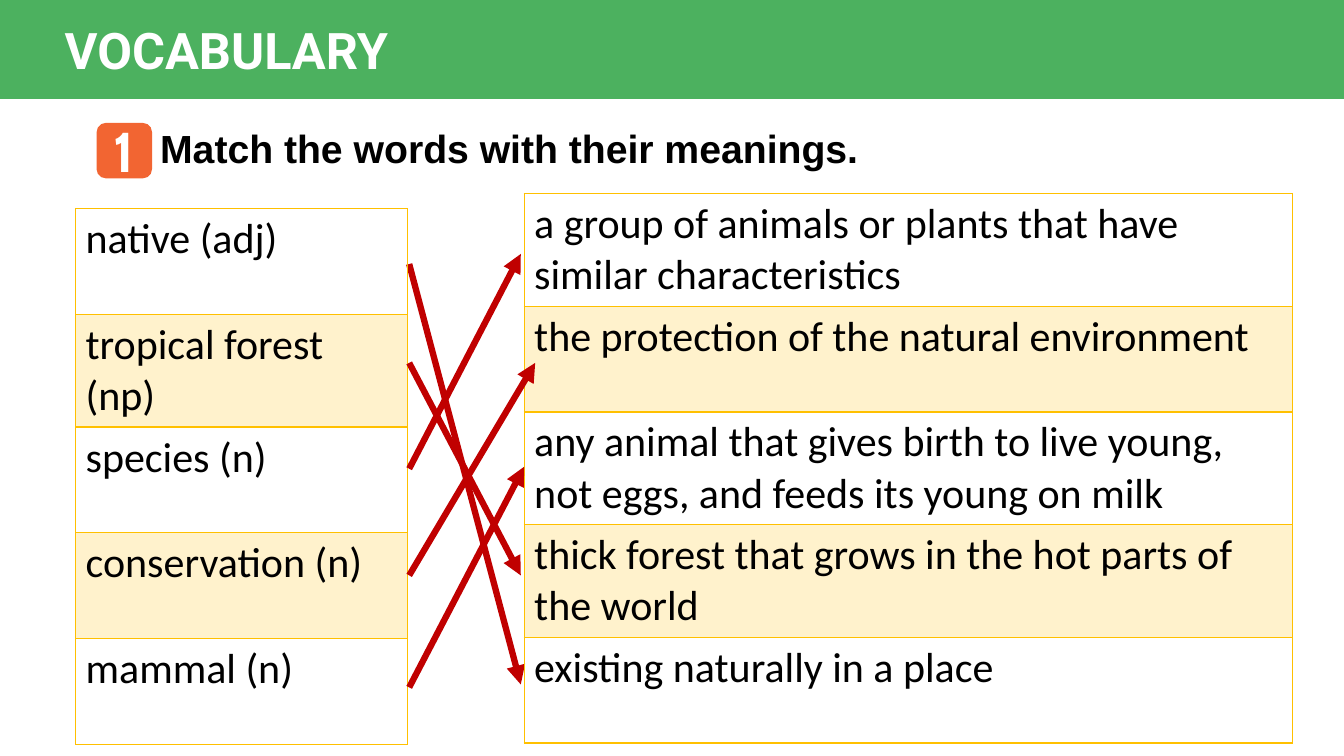
from lxml import etree
from pptx import Presentation
from pptx.dml.color import RGBColor
from pptx.enum.shapes import MSO_CONNECTOR, MSO_SHAPE
from pptx.enum.text import MSO_ANCHOR, PP_ALIGN
from pptx.oxml import parse_xml
from pptx.oxml.ns import nsdecls, qn
from pptx.util import Pt

LINE = MSO_CONNECTOR.STRAIGHT
RECT, ROUND = MSO_SHAPE.RECTANGLE, MSO_SHAPE.ROUNDED_RECTANGLE
LEFT, CENTER = PP_ALIGN.LEFT, PP_ALIGN.CENTER
TOP, MIDDLE = MSO_ANCHOR.TOP, MSO_ANCHOR.MIDDLE

GREEN, ORANGE, RED = "4CB15F", "F26532", "C00000"
GOLD, CREAM, WHITE, BLACK = "FFC000", "FFF2CC", "FFFFFF", "000000"

WORDS = ["native (adj)", "tropical forest (np)", "species (n)",
         "conservation (n)", "mammal (n)"]
MEANINGS = [
    "a group of animals or plants that have similar characteristics",
    "the protection of the natural environment",
    "any animal that gives birth to live young, not eggs, and feeds its young on milk",
    "thick forest that grows in the hot parts of the world",
    "existing naturally in a place",
]
# For each word: start height, then the tip on its meaning
LINKS = [(188.6, 372, 488.9), (259.2, 372, 411), (334.8, 372, 181.4),
         (411, 382.3, 259.2), (491, 374.4, 333.4)]


def color(code):
    return RGBColor.from_string(code)


def write(frame, text, size, font, code, bold=True, align=LEFT, anchor=TOP):
    frame.word_wrap = True
    frame.vertical_anchor = anchor
    para = frame.paragraphs[0]
    para.alignment = align
    run = para.add_run()
    run.text = text
    run.font.size = Pt(size)
    run.font.name = font
    run.font.bold = bold
    run.font.color.rgb = color(code)


def block(slide, kind, x, y, w, h, code):
    shape = slide.shapes.add_shape(kind, Pt(x), Pt(y), Pt(w), Pt(h))
    shape.shadow.inherit = False
    shape.fill.solid()
    shape.fill.fore_color.rgb = color(code)
    shape.line.fill.background()


def label(slide, x, y, w, h, *args, **style):
    box = slide.shapes.add_textbox(Pt(x), Pt(y), Pt(w), Pt(h))
    write(box.text_frame, *args, **style)


def banner(slide, x, y, w, h):
    block(slide, RECT, x, y, w, h, GREEN)
    title = slide.shapes.title
    title.left, title.top = Pt(x + 39), Pt(y + 10)
    title.width, title.height = Pt(360), Pt(h - 19.6)
    write(title.text_frame, "VOCABULARY", 36, "Roboto", WHITE, anchor=MIDDLE)
    slide.shapes._spTree.append(title._element)  # above the bar


def task(slide, x, y, side):
    """Numbered badge with the instruction to its right."""
    block(slide, ROUND, x, y, side, side, ORANGE)
    label(slide, x + 2, y - 8, side - 4, side + 16, "1", 40, "Cabin", WHITE, align=CENTER)
    label(slide, x + 38.3, y - 2.2, 826, 41,
          "Match the words with their meanings.", 28, "Arial", BLACK)


def border(cell):
    props = cell._tc.get_or_add_tcPr()
    for i, side in enumerate("LRTB"):
        props.insert(i, parse_xml(
            f'<a:ln{side} {nsdecls("a")} w="{Pt(1)}"><a:solidFill>'
            f'<a:srgbClr val="{GOLD}"/></a:solidFill></a:ln{side}>'))


def column(slide, x, y, w, row, items):
    """One-column table with every second row tinted."""
    count = len(items)
    frame = slide.shapes.add_table(count, 1, Pt(x), Pt(y), Pt(w), Pt(row * count))
    table = frame.table
    table.first_row = table.horz_banding = False
    for i, text in enumerate(items):
        table.rows[i].height = Pt(row)
        cell = table.cell(i, 0)
        if i % 2:
            cell.fill.solid()
            cell.fill.fore_color.rgb = color(CREAM)
        else:
            cell.fill.background()
        border(cell)
        write(cell.text_frame, text, 30, "Calibri", BLACK, bold=False)


def arrows(slide, x, links):
    for start, tip, end in links:
        line = slide.shapes.add_connector(LINE, Pt(x), Pt(start), Pt(tip), Pt(end))
        line.line.color.rgb = color(RED)
        line.line.width = Pt(4.5)
        etree.SubElement(line.line._get_or_add_ln(), qn("a:tailEnd"), type="triangle")
        etree.SubElement(line._element.spPr, qn("a:effectLst"))


def main():
    deck = Presentation()
    deck.slide_width, deck.slide_height = Pt(960), Pt(540)
    slide = deck.slides.add_slide(deck.slide_layouts[5])
    task(slide, 69, 87.8, 39.6)
    banner(slide, 0, 0, 960, 70.6)
    arrows(slide, 292.3, LINKS[:1])
    column(slide, 54, 149, 236.9, 75.6, WORDS)
    column(slide, 374.4, 138.2, 548.6, 75.6, MEANINGS)
    arrows(slide, 292.3, LINKS[1:])
    deck.save("out.pptx")


if __name__ == "__main__":
    main()
